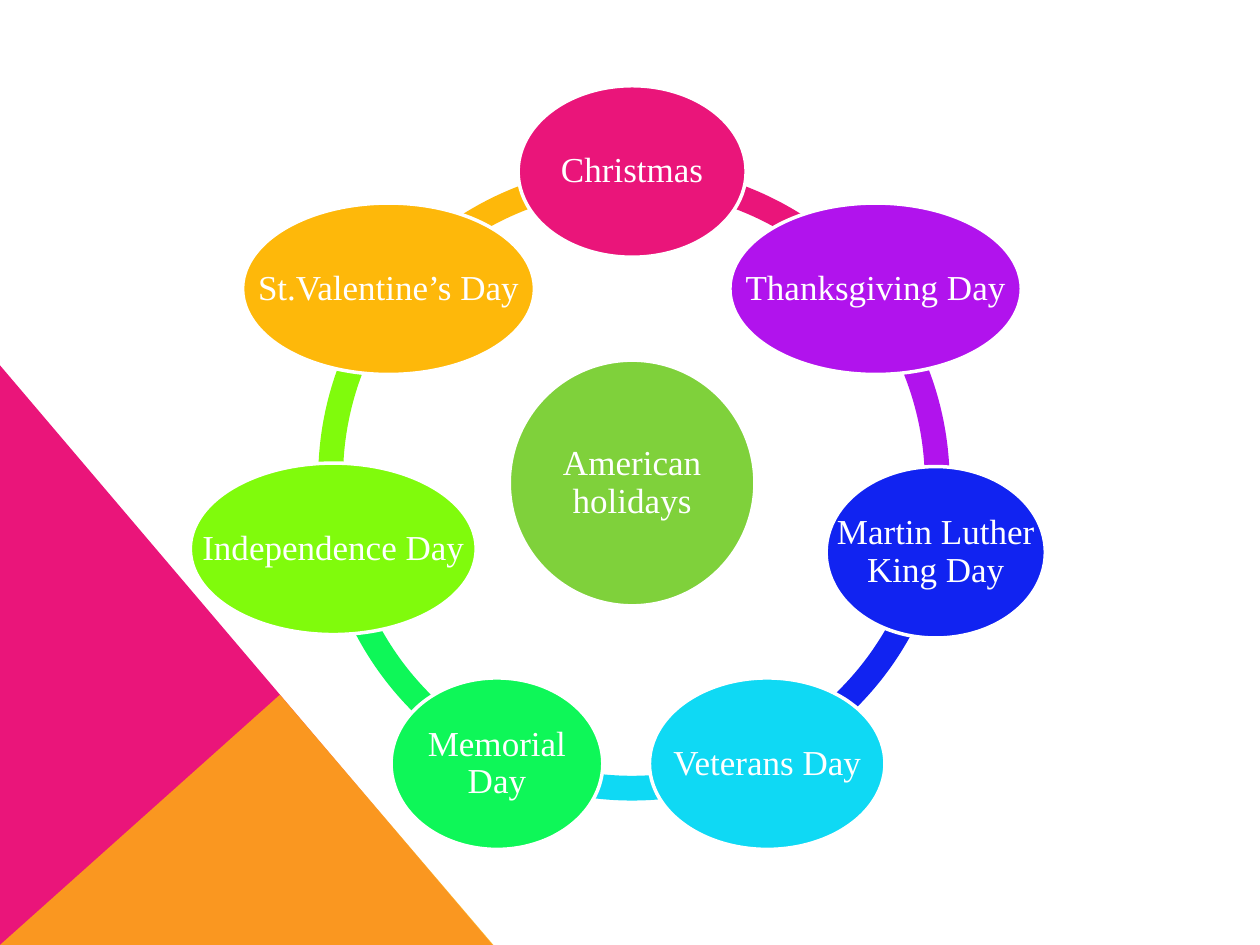
from dataclasses import dataclass
from math import cos, radians, sin

from lxml.etree import SubElement
from pptx import Presentation
from pptx.dml.color import RGBColor
from pptx.enum.shapes import MSO_SHAPE
from pptx.enum.text import MSO_ANCHOR, PP_ALIGN
from pptx.oxml.ns import qn
from pptx.util import Pt


@dataclass(frozen=True)
class Theme:
    pink: str = "EA157A"
    orange: str = "FEB80A"
    green: str = "7FD13B"
    white: str = "FFFFFF"
    font: str = "Times New Roman"
    size: int = 20
    outline: int = 2


@dataclass(frozen=True)
class Holiday:
    name: str
    color: str
    width: float
    shift: tuple = (0, 0)
    arc_shift: tuple = (0, 0)


THEME = Theme()
CENTER = (361.2, 276)
NODE_RADIUS = 178
NODE_HEIGHT = 98
HUB_SIZE = 140.4
RING_SIZE = 363
RING_THICKNESS = 0.039
HOLIDAYS = [
    Holiday("Christmas", THEME.pink, 130.3),
    Holiday("Thanksgiving Day", "B113ED", 166.5),
    Holiday("Martin Luther King Day", "1123F1", 125.3),
    Holiday("Veterans Day", "0FD9F4", 134.6),
    Holiday("Memorial Day", "0EF758", 121, arc_shift=(2.9, 2.2)),
    Holiday("Independence Day", "80FB0C", 163.4, (2.8, -2), (2.2, -2.9)),
    Holiday("St.Valentine’s Day", THEME.orange, 166.8),
]
STEP = 360 / len(HOLIDAYS)


def paint(shape, color):
    shape.shadow.inherit = False
    shape.fill.solid()
    shape.fill.fore_color.rgb = RGBColor.from_string(color)
    shape.line.fill.background()


def centered_box(center, width, height):
    x, y = center
    return Pt(x - width / 2), Pt(y - height / 2), Pt(width), Pt(height)


def moved(point, shift):
    return point[0] + shift[0], point[1] + shift[1]


def node_angle(index):
    """Degrees clockwise from the right, with the first node on top."""
    return (270 + index * STEP) % 360


def add_corner(page):
    triangle = page.shapes.add_shape(
        MSO_SHAPE.RIGHT_TRIANGLE, 0, Pt(208.8), Pt(281.5), Pt(331.2))
    paint(triangle, THEME.pink)
    builder = page.shapes.build_freeform(0, 540, scale=Pt(1))
    builder.add_line_segments([(160.5, 397.4), (281.5, 540)], close=True)
    fold = builder.convert_to_shape()
    paint(fold, THEME.orange)
    color = fold.fill._xPr.find(qn("a:solidFill"))[0]
    SubElement(color, qn("a:alpha"), val="80000")


def add_arc(page, index, holiday):
    """Draw the ring section from this holiday to the next one."""
    box = centered_box(moved(CENTER, holiday.arc_shift), RING_SIZE, RING_SIZE)
    arc = page.shapes.add_shape(MSO_SHAPE.BLOCK_ARC, *box)
    # Angles are stored as 60000ths of a degree, adjustments as 100000ths.
    arc.adjustments[0] = node_angle(index) * 0.6
    arc.adjustments[1] = node_angle(index + 1) * 0.6
    arc.adjustments[2] = RING_THICKNESS
    paint(arc, holiday.color)


def add_label(page, text, box):
    frame = page.shapes.add_textbox(*box).text_frame
    frame.word_wrap = True
    frame.vertical_anchor = MSO_ANCHOR.MIDDLE
    frame.margin_left = frame.margin_right = Pt(2.2)
    frame.margin_top = frame.margin_bottom = Pt(2.2)
    para = frame.paragraphs[0]
    para.text = text
    para.alignment = PP_ALIGN.CENTER
    para.line_spacing = 0.9
    para.font.name = THEME.font
    para.font.size = Pt(THEME.size)
    para.font.color.rgb = RGBColor.from_string(THEME.white)


def add_node(page, text, color, center, width, height):
    """Draw an ellipse with a label that may use its full width."""
    box = centered_box(center, width, height)
    ellipse = page.shapes.add_shape(MSO_SHAPE.OVAL, *box)
    paint(ellipse, color)
    ellipse.line.color.rgb = RGBColor.from_string(THEME.white)
    ellipse.line.width = Pt(THEME.outline)
    add_label(page, text, box)


def add_holiday(page, index, holiday):
    angle = radians(node_angle(index))
    spoke = NODE_RADIUS * cos(angle), NODE_RADIUS * sin(angle)
    center = moved(moved(CENTER, spoke), holiday.shift)
    add_node(page, holiday.name, holiday.color, center,
             holiday.width, NODE_HEIGHT)


def main():
    deck = Presentation()
    deck.slide_width, deck.slide_height = Pt(720), Pt(540)
    page = deck.slides.add_slide(deck.slide_layouts[6])
    add_corner(page)
    for index, holiday in reversed(list(enumerate(HOLIDAYS))):
        add_arc(page, index, holiday)
    add_node(page, "American holidays", THEME.green, CENTER,
             HUB_SIZE, HUB_SIZE)
    for index, holiday in enumerate(HOLIDAYS):
        add_holiday(page, index, holiday)
    deck.save("out.pptx")


if __name__ == "__main__":
    main()
